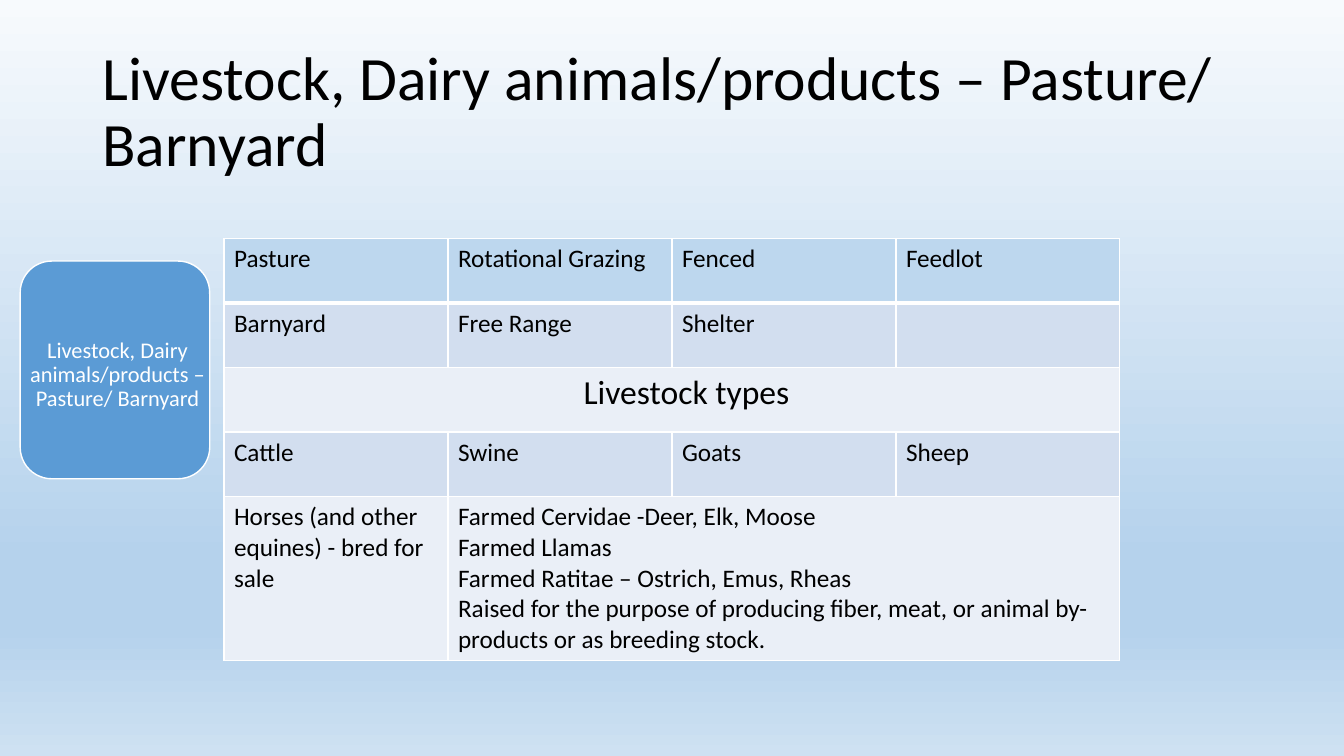
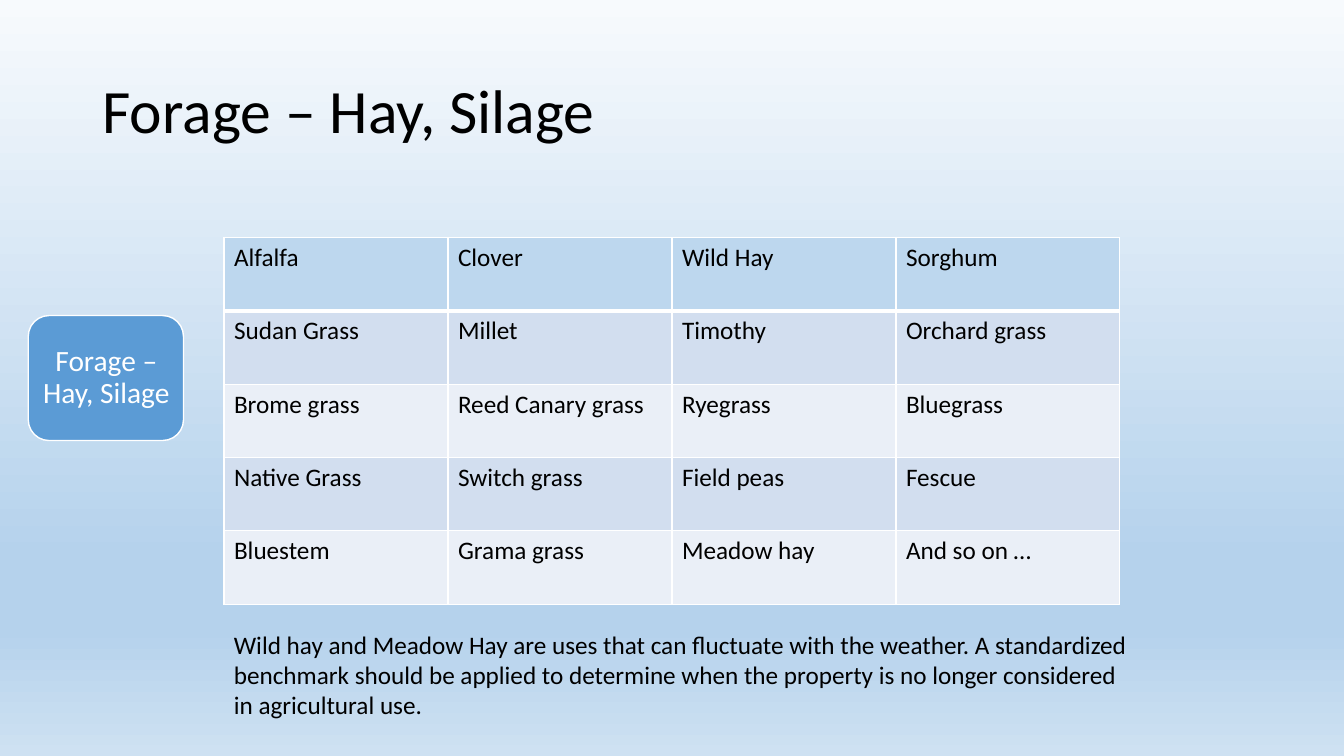
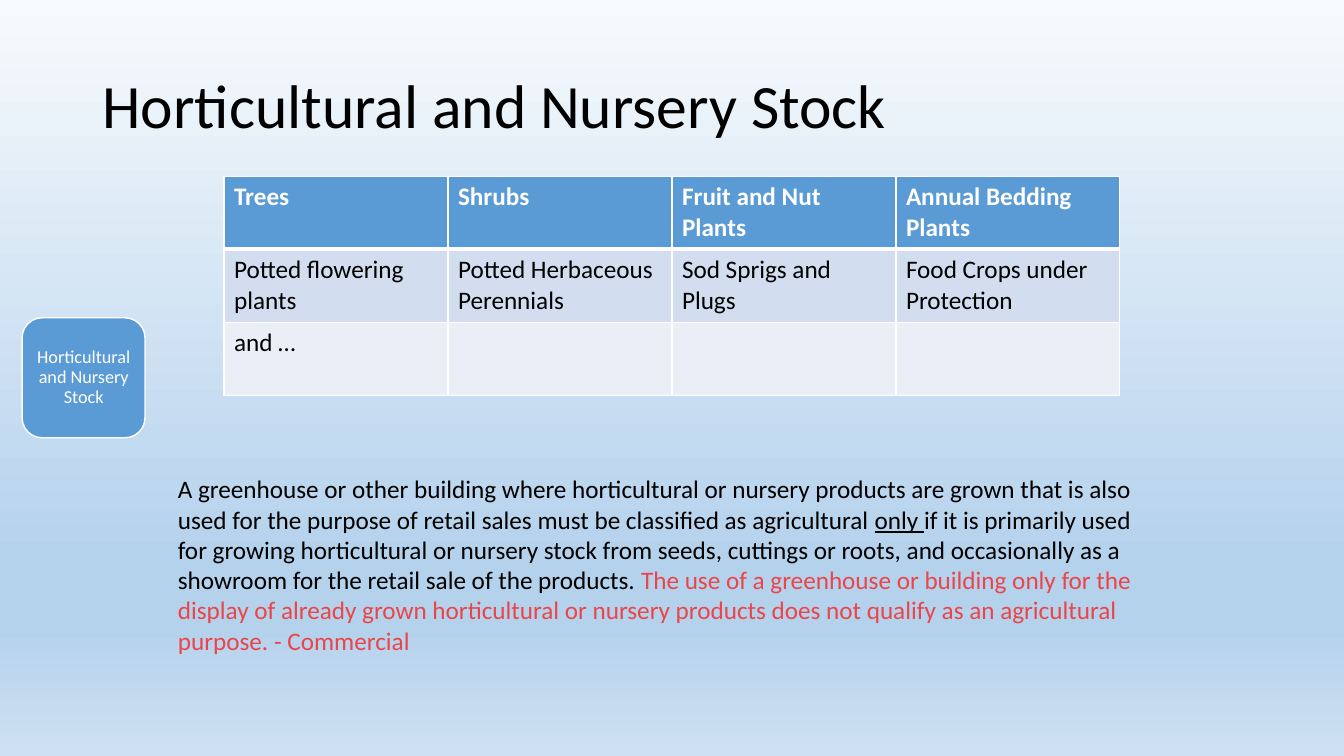
from dataclasses import dataclass

from lxml.etree import SubElement
from pptx import Presentation
from pptx.dml.color import RGBColor
from pptx.enum.shapes import MSO_SHAPE
from pptx.enum.text import MSO_ANCHOR, MSO_AUTO_SIZE, PP_ALIGN
from pptx.oxml.ns import qn
from pptx.util import Pt


@dataclass(frozen=True)
class Theme:
    font: str = "Calibri"
    black: str = "000000"
    white: str = "FFFFFF"
    accent: str = "5B9BD5"
    pale_header: str = "BDD7EE"
    bands: tuple = ("D2DEEF", "EAEFF7")
    warning: str = "EB4549"
    backdrop: tuple = ((0, "F7FAFD"), (74, "B5D2EC"), (83, "B5D2EC"), (100, "CEE1F2"))
    title_size: float = 44
    heading_size: float = 24
    body_size: float = 18
    tight: float = 0.9


T = Theme()
TABLE_LEFT, COL_WIDTH = 160, 160


# Text
def add_run(p, text, size=T.body_size, color=T.black, bold=False, underline=False):
    r = p.add_run()
    r.text = text
    f = r.font
    f.name, f.size, f.bold = T.font, Pt(size), bold
    f.color.rgb = RGBColor.from_string(color)
    if underline:
        f.underline = True


def fill_text(tf, paragraphs, align=PP_ALIGN.LEFT, spacing=None, **style):
    """Each paragraph is a string or a list of (text, run style) pairs."""
    for i, runs in enumerate(paragraphs):
        p = tf.paragraphs[0] if i == 0 else tf.add_paragraph()
        p.alignment = align
        if spacing:
            p.line_spacing = spacing
        if isinstance(runs, str):
            runs = [(runs, {})]
        for text, own in runs:
            add_run(p, text, **{**style, **own})


def add_text(s, box, paragraphs, inset=None, anchor=MSO_ANCHOR.TOP, **style):
    tf = s.shapes.add_textbox(*map(Pt, box)).text_frame
    tf.word_wrap = True
    tf.vertical_anchor = anchor
    if inset is not None:
        tf.margin_left = tf.margin_right = tf.margin_top = tf.margin_bottom = Pt(inset)
    fill_text(tf, paragraphs, **style)


# Shared slide parts
def set_backdrop(master):
    fill = master.background.fill
    fill.gradient()
    fill.gradient_angle = 270
    stops = master.element.find(".//" + qn("p:bg")).find(".//" + qn("a:gsLst"))
    for stop in list(stops):
        stops.remove(stop)
    for pos, color in T.backdrop:
        stop = SubElement(stops, qn("a:gs"), pos=str(pos * 1000))
        SubElement(stop, qn("a:srgbClr"), val=color)


def add_slide(prs, title, title_height=104.4):
    s = prs.slides.add_slide(prs.slide_layouts[5])
    sp = s.shapes.title
    sp.left, sp.top, sp.width, sp.height = map(Pt, (66, 28.8, 828, title_height))
    tf = sp.text_frame
    tf.word_wrap, tf.auto_size = True, MSO_AUTO_SIZE.NONE
    tf.vertical_anchor = MSO_ANCHOR.MIDDLE
    fill_text(tf, [title], spacing=T.tight, size=T.title_size)
    return s


def add_label(s, box, text_box, text, size, inset):
    sp = s.shapes.add_shape(MSO_SHAPE.ROUNDED_RECTANGLE, *map(Pt, box))
    sp.shadow.inherit = False
    sp.fill.solid()
    sp.fill.fore_color.rgb = RGBColor.from_string(T.accent)
    sp.line.color.rgb = RGBColor.from_string(T.white)
    sp.line.width = Pt(1)
    add_text(s, text_box, [text], inset, MSO_ANCHOR.MIDDLE,
             align=PP_ALIGN.CENTER, spacing=T.tight, size=size, color=T.white)


# Tables
def set_borders(cell, top, bottom):
    tc_pr = cell._tc.get_or_add_tcPr()
    for side, width in (("L", 1), ("R", 1), ("T", top), ("B", bottom)):
        ln = SubElement(tc_pr, qn("a:ln" + side), w=str(Pt(width)))
        fill = SubElement(ln, qn("a:solidFill"))
        SubElement(fill, qn("a:srgbClr"), val=T.white)


def add_grid(s, top, heights, rows, header_fill=T.pale_header, header_style=None):
    """The first row is the header; a cell is a string or a list of paragraphs."""
    cols = len(rows[0])
    table = s.shapes.add_table(len(rows), cols, Pt(TABLE_LEFT), Pt(top),
                               Pt(cols * COL_WIDTH), Pt(sum(heights))).table
    table.horz_banding = table.first_row = False
    for col in table.columns:
        col.width = Pt(COL_WIDTH)
    for i, (height, texts) in enumerate(zip(heights, rows)):
        table.rows[i].height = Pt(height)
        color = T.bands[(i - 1) % 2] if i else header_fill
        for j in range(cols):
            cell = table.cell(i, j)
            set_borders(cell, top=3 if i == 1 else 1, bottom=3 if i == 0 else 1)
            cell.fill.solid()
            cell.fill.fore_color.rgb = RGBColor.from_string(color)
            text = texts[j] if j < len(texts) else ""
            if text:
                paragraphs = [text] if isinstance(text, str) else text
                style = (header_style or {}) if i == 0 else {}
                fill_text(cell.text_frame, paragraphs, **style)
    return table


# Slides
def livestock_slide(prs):
    name = "Livestock, Dairy animals/products – Pasture/ Barnyard"
    s = add_slide(prs, name)
    add_label(s, (14.4, 186.5, 135.4, 155.5), (8, 194.4, 152, 147.6), name, 16, 2.2)
    table = add_grid(s, 170.3, [46.1] * 4 + [117], [
        ["Pasture", "Rotational Grazing", "Fenced", "Feedlot"],
        ["Barnyard", "Free Range", "Shelter", ""],
        [],
        ["Cattle", "Swine", "Goats", "Sheep"],
        ["Horses (and other equines) - bred for sale",
         ["Farmed Cervidae -Deer, Elk, Moose",
          "Farmed Llamas",
          "Farmed Ratitae – Ostrich, Emus, Rheas",
          "Raised for the purpose of producing fiber, meat, or animal "
          "by-products or as breeding stock."]],
    ])
    heading = table.cell(2, 0)
    heading.merge(table.cell(2, 3))
    heading.margin_left = Pt(28)
    fill_text(heading.text_frame, ["Livestock types"],
              align=PP_ALIGN.CENTER, size=T.heading_size)
    table.cell(4, 1).merge(table.cell(4, 3))


def forage_slide(prs):
    name = "Forage – Hay, Silage"
    s = add_slide(prs, name)
    add_label(s, (20.2, 225.4, 110.9, 89.3), (25.9, 229.7, 100.1, 80.6), name, 21, 4.3)
    add_grid(s, 169.6, [52.4] * 5, [
        ["Alfalfa", "Clover", "Wild Hay", "Sorghum"],
        ["Sudan Grass", "Millet", "Timothy", "Orchard grass"],
        ["Brome grass", "Reed Canary grass", "Ryegrass", "Bluegrass"],
        ["Native Grass", "Switch grass", "Field peas", "Fescue"],
        ["Bluestem", "Grama grass", "Meadow hay", "And so on …"],
    ])
    add_text(s, (TABLE_LEFT, 445.7, 652.3, 94.3), [
        "Wild hay and Meadow Hay are uses that can fluctuate with the weather. "
        "A standardized benchmark should be applied to determine when the property "
        "is no longer considered in agricultural use."])


def nursery_slide(prs):
    name = "Horticultural and Nursery Stock"
    s = add_slide(prs, name, title_height=97.2)
    add_label(s, (15.8, 227, 87.8, 85.7), (20.2, 231.1, 79.2, 77), name, 13, 2.9)
    add_grid(s, 126, [52.1] * 3, [
        ["Trees", "Shrubs", "Fruit and Nut Plants", "Annual Bedding Plants"],
        ["Potted flowering plants", "Potted Herbaceous Perennials",
         "Sod Sprigs and Plugs", "Food Crops under Protection"],
        ["and …"],
    ], header_fill=T.accent, header_style={"color": T.white, "bold": True})
    red = {"color": T.warning}
    add_text(s, (120, 334.8, 731.5, 138.2), [
        "A greenhouse or other building where horticultural or nursery products "
        "are grown that is also",
        [("used for the purpose of retail sales must be classified as agricultural ", {}),
         ("only ", {"underline": True}),
         ("if it is primarily used", {})],
        "for growing horticultural or nursery stock from seeds, cuttings or roots, "
        "and occasionally as a",
        [("showroom for the retail sale of the products. ", {}),
         ("The use of a greenhouse or building only for the", red)],
        [("display of already grown horticultural or nursery products does not "
          "qualify as an agricultural", red)],
        [("purpose. - Commercial", red)],
    ])


def main():
    prs = Presentation()
    prs.slide_width, prs.slide_height = Pt(960), Pt(540)
    set_backdrop(prs.slide_master)
    livestock_slide(prs)
    forage_slide(prs)
    nursery_slide(prs)
    prs.save("out.pptx")


if __name__ == "__main__":
    main()
